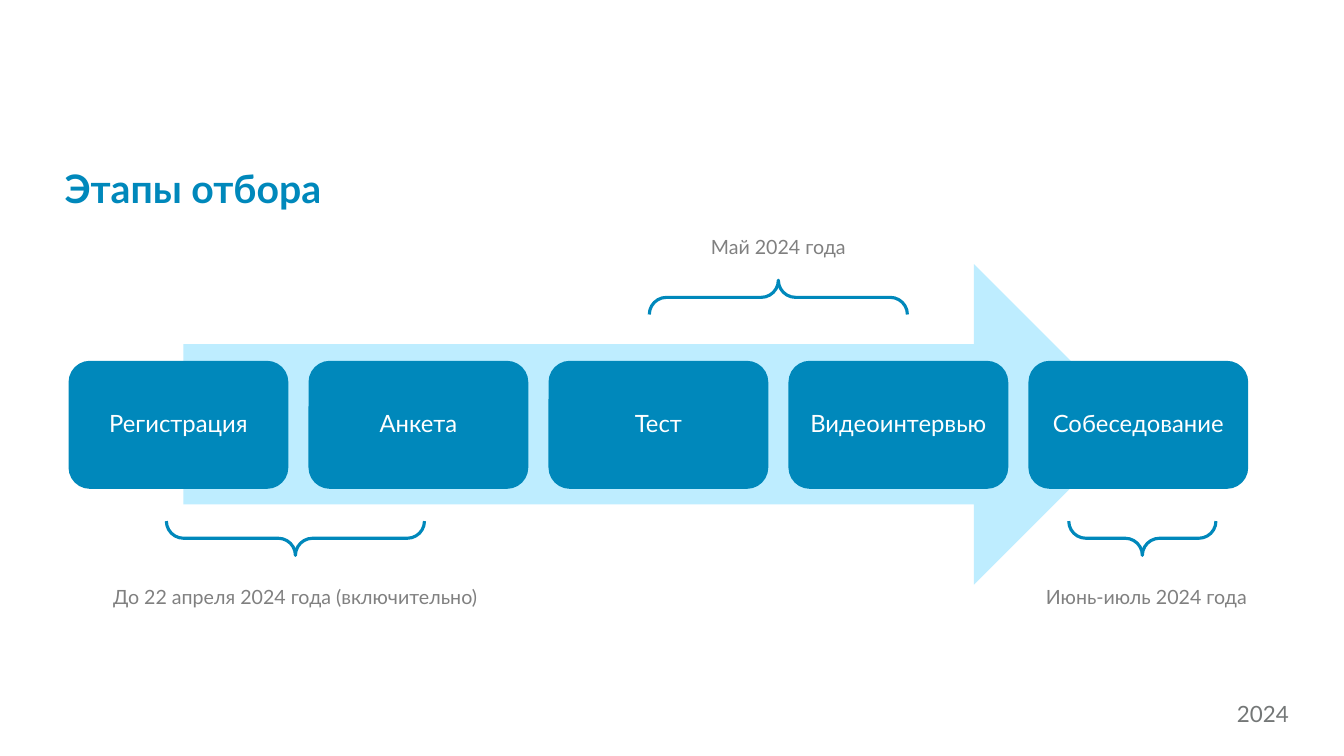
import pptx
import pptx.dml.color
import pptx.enum.shapes
import pptx.enum.text
import pptx.util
from pptx.util import Inches

FONT = "Lato"
BLUE = "0088BB"
PALE_BLUE = "BEEDFF"
LABEL_GRAY = "808080"
DATE_GRAY = "747777"
WHITE = "FFFFFF"

SHAPES = pptx.enum.shapes.MSO_SHAPE
ALIGN = pptx.enum.text.PP_ALIGN
ANCHOR = pptx.enum.text.MSO_ANCHOR

STAGES = ["Регистрация", "Анкета", "Тест", "Видеоинтервью", "Собеседование"]
STAGE_LEFT, STAGE_TOP, STAGE_WIDTH, STAGE_HEIGHT = 0.68, 3.58, 2.18, 1.27
STAGE_STEP = 2.38

# text, label centre x and y, brace centre x and y, brace span, rotation
PERIODS = [
    ("До 22 апреля 2024 года (включительно)", 2.93, 5.92, 2.93, 5.34, 2.56, 90),
    ("Май 2024 года", 7.72, 2.45, 7.72, 2.95, 2.56, 270),
    ("Июнь-июль 2024 года", 11.37, 5.92, 11.33, 5.34, 1.46, 90),
]
BRACE_DEPTH = 0.34
LABEL_WIDTH, LABEL_HEIGHT = 3.9, 0.34


def color(value):
    return pptx.dml.color.RGBColor.from_string(value)


def write(shape, text, size, text_color, align=ALIGN.LEFT, anchor=ANCHOR.TOP, bold=False):
    """Put one formatted paragraph into a shape and return it."""
    frame = shape.text_frame
    frame.word_wrap = True
    frame.auto_size = pptx.enum.text.MSO_AUTO_SIZE.NONE
    frame.vertical_anchor = anchor
    frame.text = text
    paragraph = frame.paragraphs[0]
    paragraph.alignment = align
    font = paragraph.font
    font.name = FONT
    font.size = pptx.util.Pt(size)
    font.bold = bold
    font.color.rgb = color(text_color)
    return paragraph


def add_title(slide, text):
    title = slide.shapes.title
    title.left, title.top = Inches(0.54), Inches(1.58)
    title.width, title.height = Inches(7.57), Inches(0.6)
    write(title, text, 28, BLUE, bold=True)


def add_filled_shape(slide, kind, left, top, width, height, fill):
    shape = slide.shapes.add_shape(
        kind, Inches(left), Inches(top), Inches(width), Inches(height))
    shape.shadow.inherit = False
    shape.fill.solid()
    shape.fill.fore_color.rgb = color(fill)
    shape.line.fill.background()
    return shape


def add_stage(slide, index, name):
    box = add_filled_shape(
        slide, SHAPES.ROUNDED_RECTANGLE, STAGE_LEFT + index * STAGE_STEP,
        STAGE_TOP, STAGE_WIDTH, STAGE_HEIGHT, BLUE)
    frame = box.text_frame
    frame.margin_left = frame.margin_right = Inches(0.07)
    frame.margin_top = frame.margin_bottom = Inches(0.07)
    paragraph = write(box, name, 17, WHITE, ALIGN.CENTER, ANCHOR.MIDDLE)
    paragraph.line_spacing = 0.9


def add_text(slide, text, left, top, width, height, *style):
    box = slide.shapes.add_textbox(
        Inches(left), Inches(top), Inches(width), Inches(height))
    write(box, text, *style)


def add_brace(slide, center_x, center_y, span, rotation):
    brace = slide.shapes.add_shape(
        SHAPES.RIGHT_BRACE, Inches(center_x - BRACE_DEPTH / 2),
        Inches(center_y - span / 2), Inches(BRACE_DEPTH), Inches(span))
    brace.rotation = rotation
    brace.adjustments[0] = 0.5
    brace.shadow.inherit = False
    brace.fill.background()
    brace.line.color.rgb = color(BLUE)
    brace.line.width = pptx.util.Pt(2.25)


def main():
    presentation = pptx.Presentation()
    presentation.slide_width = Inches(13.33)
    presentation.slide_height = Inches(7.5)
    slide = presentation.slides.add_slide(presentation.slide_layouts[5])

    add_title(slide, "Этапы отбора")
    add_filled_shape(slide, SHAPES.RIGHT_ARROW, 1.82, 2.62, 9.43, 3.18, PALE_BLUE)
    for index, name in enumerate(STAGES):
        add_stage(slide, index, name)
    for text, label_x, label_y, brace_x, brace_y, span, rotation in PERIODS:
        add_text(slide, text, label_x - LABEL_WIDTH / 2, label_y - LABEL_HEIGHT / 2,
                 LABEL_WIDTH, LABEL_HEIGHT, 14, LABEL_GRAY, ALIGN.CENTER, ANCHOR.MIDDLE)
        add_brace(slide, brace_x, brace_y, span, rotation)
    add_text(slide, "2024", 12.17, 6.9, 1.1, 0.37, 16, DATE_GRAY)

    presentation.save("out.pptx")


if __name__ == "__main__":
    main()
